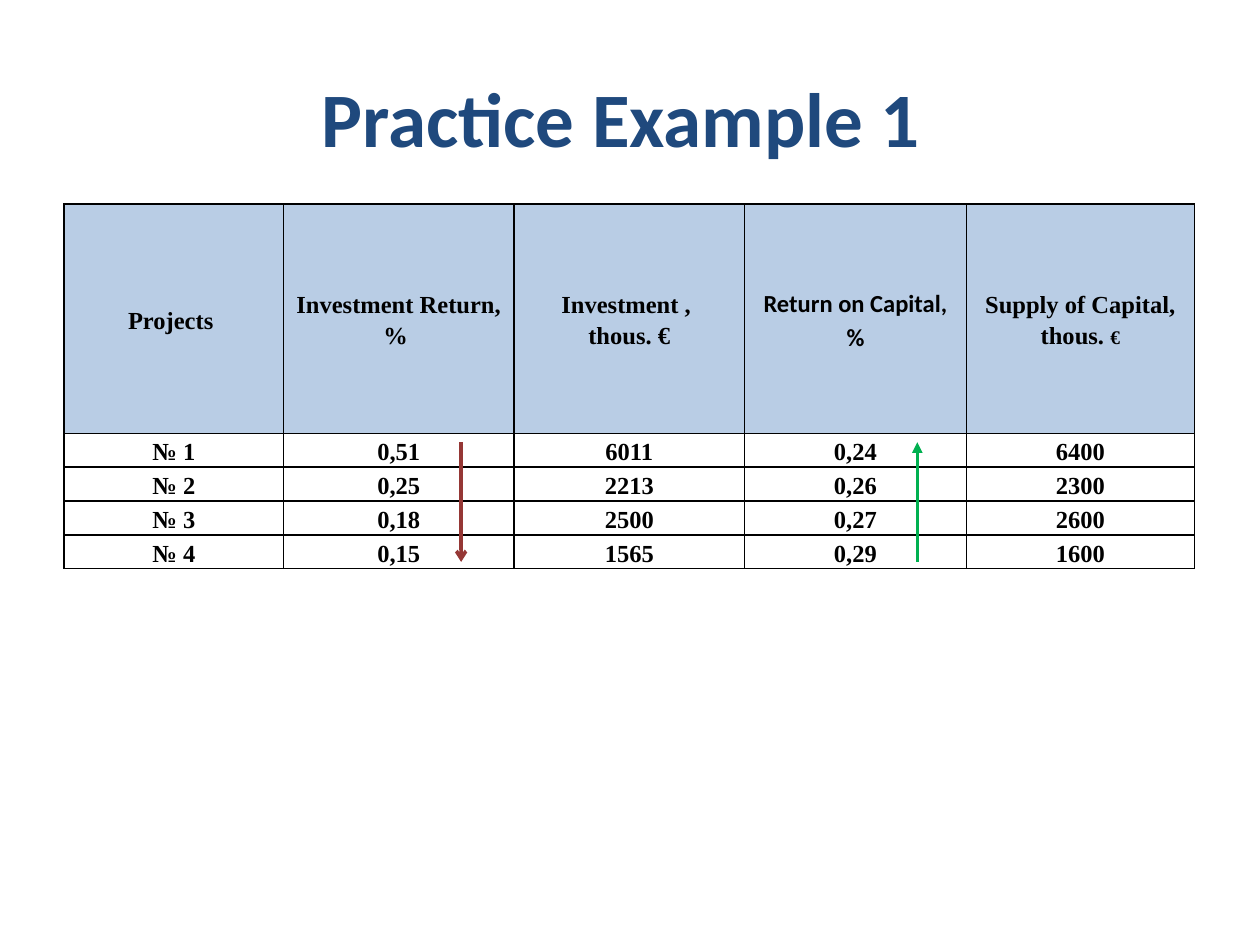
from lxml import etree
from pptx import Presentation
from pptx.dml.color import RGBColor
from pptx.enum.shapes import MSO_CONNECTOR
from pptx.enum.text import MSO_ANCHOR, PP_ALIGN
from pptx.oxml.ns import qn
from pptx.util import Inches, Pt

CENTER = PP_ALIGN.CENTER
MIDDLE = MSO_ANCHOR.MIDDLE
STRAIGHT = MSO_CONNECTOR.STRAIGHT

SERIF = "Times New Roman"
SANS = "Calibri"
BLACK, NAVY, PALE_BLUE = "000000", "1F497D", "B9CDE5"
RED, GREEN = "953735", "00B050"

COLUMN_WIDTHS = [1.74, 1.83, 1.83, 1.76, 1.81]
HEADER_HEIGHT, ROW_HEIGHT = 1.82, 0.26
CELL_FORMAT = {
    "margin_left": Inches(0.07),
    "margin_right": Inches(0.07),
    "margin_top": 0,
    "margin_bottom": 0,
    "vertical_anchor": MIDDLE,
}
HEADINGS = [
    [[("Projects ", SERIF, 14)]],
    [[("Investment Return, % ", SERIF, 14)]],
    [[("Investment , ", SERIF, 14)], [("thous. €", SERIF, 14)]],
    [[("Return on Capital, %", SANS, 14)]],
    [[("Supply of Capital, thous. ", SERIF, 14), ("€", SERIF, 11)]],
]
PROJECTS = [
    ["№ 1", "0,51", "6011", "0,24", "6400"],
    ["№ 2", "0,25", "2213", "0,26", "2300"],
    ["№ 3", "0,18", "2500", "0,27", "2600"],
    ["№ 4", "0,15", "1565", "0,29", "1600"],
]


def rgb(value):
    return RGBColor.from_string(value)


def apply(target, settings):
    for name, value in settings.items():
        setattr(target, name, value)


def write(frame, paragraphs, color, spacing):
    for index, pieces in enumerate(paragraphs):
        paragraph = frame.add_paragraph() if index else frame.paragraphs[0]
        apply(paragraph, {"alignment": CENTER, "line_spacing": spacing})
        for text, font, size in pieces:
            run = paragraph.add_run()
            run.text = text
            apply(run.font, {"name": font, "size": Pt(size), "bold": True})
            run.font.color.rgb = rgb(color)


def add_borders(cell, color, width):
    properties = cell._tc.get_or_add_tcPr()
    for position, side in enumerate(("a:lnL", "a:lnR", "a:lnT", "a:lnB")):
        border = etree.Element(qn(side), w=str(Pt(width)))
        fill = etree.SubElement(border, qn("a:solidFill"))
        etree.SubElement(fill, qn("a:srgbClr"), val=color)
        properties.insert(position, border)


def add_title(slide, left, top, width, height):
    title = slide.shapes.add_textbox(
        Inches(left), Inches(top), Inches(width), Inches(height)
    )
    apply(title.text_frame, {"word_wrap": True, "vertical_anchor": MIDDLE})
    write(title.text_frame, [[("Practice Example 1 ", SANS, 44)]], NAVY, 1.0)


def add_trend(slide, x, top, bottom, color, end, arrowhead):
    trend = slide.shapes.add_connector(
        STRAIGHT, Inches(x), Inches(top), Inches(x), Inches(bottom)
    )
    trend.line.color.rgb = rgb(color)
    trend.line.width = Pt(2)
    etree.SubElement(trend.line._get_or_add_ln(), qn(end), type=arrowhead)
    etree.SubElement(trend._element.spPr, qn("a:effectLst"))


def add_projects(slide, left, top, width, height):
    rows = [HEADINGS] + [
        [[[(value, SERIF, 14)]] for value in project] for project in PROJECTS
    ]
    table = slide.shapes.add_table(
        len(rows), len(COLUMN_WIDTHS),
        Inches(left), Inches(top), Inches(width), Inches(height),
    ).table
    apply(table, {"first_row": False, "horz_banding": False})
    for column, column_width in zip(table.columns, COLUMN_WIDTHS):
        column.width = Inches(column_width)
    for row_index, row in enumerate(rows):
        table.rows[row_index].height = Inches(ROW_HEIGHT if row_index else HEADER_HEIGHT)
        for column_index, paragraphs in enumerate(row):
            cell = table.cell(row_index, column_index)
            apply(cell, CELL_FORMAT)
            write(cell.text_frame, paragraphs, BLACK, 1.15)
            if row_index:
                cell.fill.background()
            else:
                cell.fill.solid()
                cell.fill.fore_color.rgb = rgb(PALE_BLUE)
            add_borders(cell, BLACK, 1)

    trend_top, trend_bottom = top + 1.89, top + 2.84
    add_trend(slide, left + 3.15, trend_top, trend_bottom, RED, "a:tailEnd", "arrow")
    add_trend(slide, left + 6.77, trend_top, trend_bottom, GREEN, "a:headEnd", "triangle")


def main():
    deck = Presentation()
    deck.slide_width, deck.slide_height = Inches(10), Inches(7.5)
    slide = deck.slides.add_slide(deck.slide_layouts[6])
    add_title(slide, 0.5, 0.3, 9, 1.25)
    add_projects(slide, 0.51, 1.62, 8.98, 2.89)
    deck.save("out.pptx")


if __name__ == "__main__":
    main()
